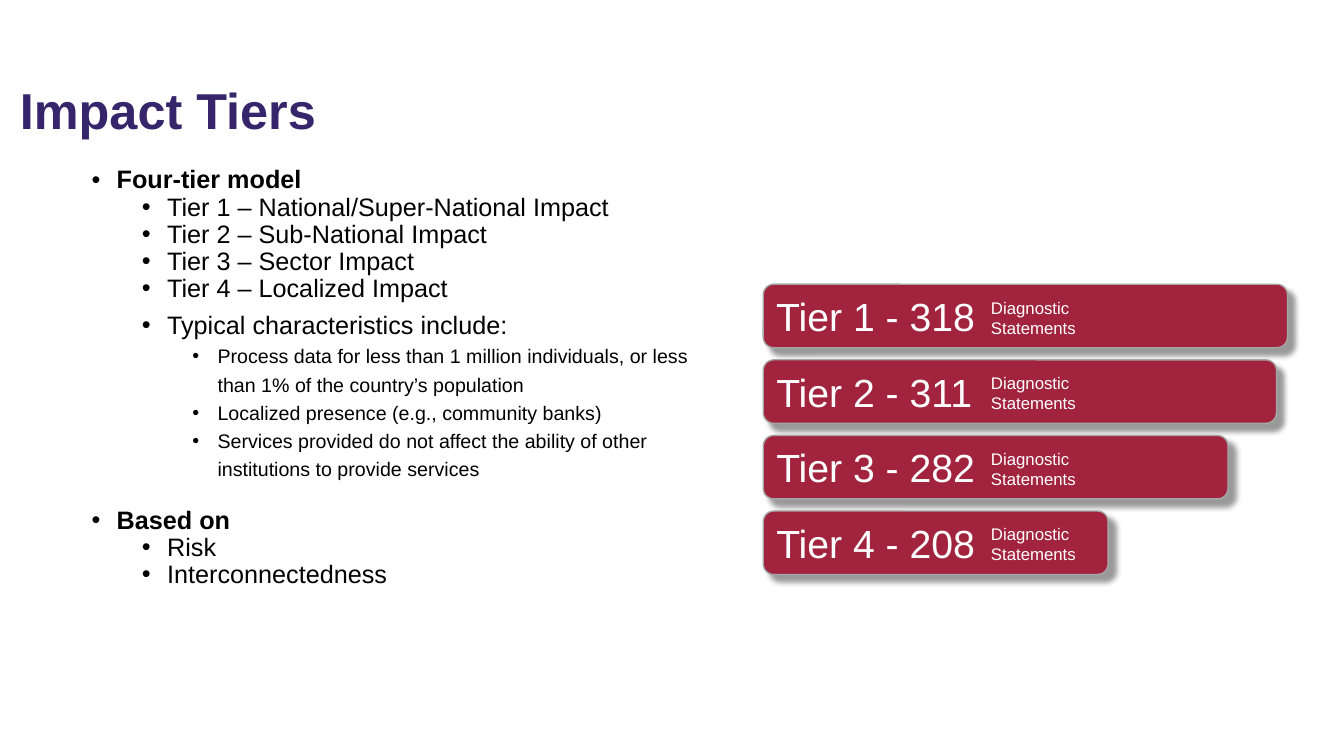
from dataclasses import dataclass

from lxml.etree import SubElement
from pptx import Presentation
from pptx.dml.color import RGBColor
from pptx.enum.shapes import MSO_SHAPE as Shape
from pptx.enum.text import MSO_ANCHOR as Anchor, PP_ALIGN as Align
from pptx.oxml import parse_xml
from pptx.oxml.ns import nsdecls, qn
from pptx.util import Inches, Pt


@dataclass(frozen=True)
class Theme:
    font: str = "Arial"
    purple: RGBColor = RGBColor(0x36, 0x25, 0x6B)
    crimson: RGBColor = RGBColor(0xA1, 0x23, 0x3D)
    edge: RGBColor = RGBColor(0xA6, 0xA6, 0xA6)
    black: RGBColor = RGBColor(0, 0, 0)
    white: RGBColor = RGBColor(255, 255, 255)
    title: int = 36
    tier: int = 28
    body: int = 18
    detail: int = 14
    caption: int = 12


theme = Theme()


def style(paragraph, size, color, bold=False):
    for run in paragraph.runs:
        run.font.name = theme.font
        run.font.size = Pt(size)
        run.font.color.rgb = color
        run.font.bold = bold


def add_text(left, top, width, height):
    box = slide.shapes.add_textbox(Inches(left), Inches(top), Inches(width), Inches(height))
    box.text_frame.word_wrap = True
    return box.text_frame


prs = Presentation()
prs.slide_width, prs.slide_height = Inches(13.33), Inches(7.5)
slide = prs.slides.add_slide(prs.slide_layouts[6])

# Title
title = add_text(0.1, 0.4, 11.5, 1.45)
title.vertical_anchor = Anchor.MIDDLE
title.text = "Impact Tiers"
title.paragraphs[0].line_spacing = 0.9
style(title.paragraphs[0], theme.title, theme.purple, bold=True)

# Outline: level, line spacing, space before, text
outline = [
    (0, 0.9, 0, "Four-tier model"),
    (1, 0.9, 0, "Tier 1 – National/Super-National Impact"),
    (1, 0.9, 0, "Tier 2 – Sub-National Impact"),
    (1, 0.9, 0, "Tier 3 – Sector Impact"),
    (1, 0.9, 0, "Tier 4 – Localized Impact"),
    (1, 1.2, 0, "Typical characteristics include:"),
    (2, 1.2, 0, "Process data for less than 1 million individuals, "
                "or less than 1% of the country’s population"),
    (2, 1.2, 0, "Localized presence (e.g., community banks)"),
    (2, 1.2, 0, "Services provided do not affect the ability of other "
                "institutions to provide services"),
    (0, 0.9, 19, "Based on"),
    (1, 0.9, 0, "Risk"),
    (1, 0.9, 0, "Interconnectedness"),
]
model = add_text(0.81, 1.61, 6.37, 5.57)
model.text = "\n".join(text for *_, text in outline)
for item, (level, spacing, before, _) in zip(model.paragraphs, outline):
    item.level = level
    item.line_spacing = spacing
    item.space_before = Pt(before)
    props = item._p.get_or_add_pPr()
    props.set("marL", str(Inches(0.25 + 0.5 * level)))
    props.set("indent", str(Inches(-0.25)))
    SubElement(props, qn("a:buFont")).set("typeface", theme.font)
    SubElement(props, qn("a:buChar")).set("char", "•")
    style(item, theme.detail if level == 2 else theme.body, theme.black, bold=level == 0)

# Tier bars: statement count and bar width
tiers = [(318, 5.2), (311, 5.09), (282, 4.61), (208, 3.42)]
for index, (count, width) in enumerate(tiers):
    top = 2.82 + 0.75 * index
    bar = slide.shapes.add_shape(Shape.ROUNDED_RECTANGLE, Inches(7.57), Inches(top),
                                 Inches(width), Inches(0.63))
    bar.fill.solid()
    bar.fill.fore_color.rgb = theme.crimson
    bar.line.color.rgb = theme.edge
    bar.line.width = Pt(1)
    bar._element.spPr.append(parse_xml(
        f'<a:effectLst {nsdecls("a")}><a:outerShdw blurRad="{Pt(4)}" dist="{Pt(7)}" '
        'dir="2700000" algn="tl" rotWithShape="0"><a:srgbClr val="000000">'
        '<a:alpha val="40000"/></a:srgbClr></a:outerShdw></a:effectLst>'))
    bar.text_frame.vertical_anchor = Anchor.MIDDLE
    bar.text_frame.text = f"Tier {index + 1} - {count}"
    bar.text_frame.paragraphs[0].alignment = Align.LEFT
    style(bar.text_frame.paragraphs[0], theme.tier, theme.white)

    caption = add_text(9.73, top + 0.08, 1.49, 0.5)
    caption.text = "Diagnostic Statements"
    style(caption.paragraphs[0], theme.caption, theme.white)

prs.save("out.pptx")
